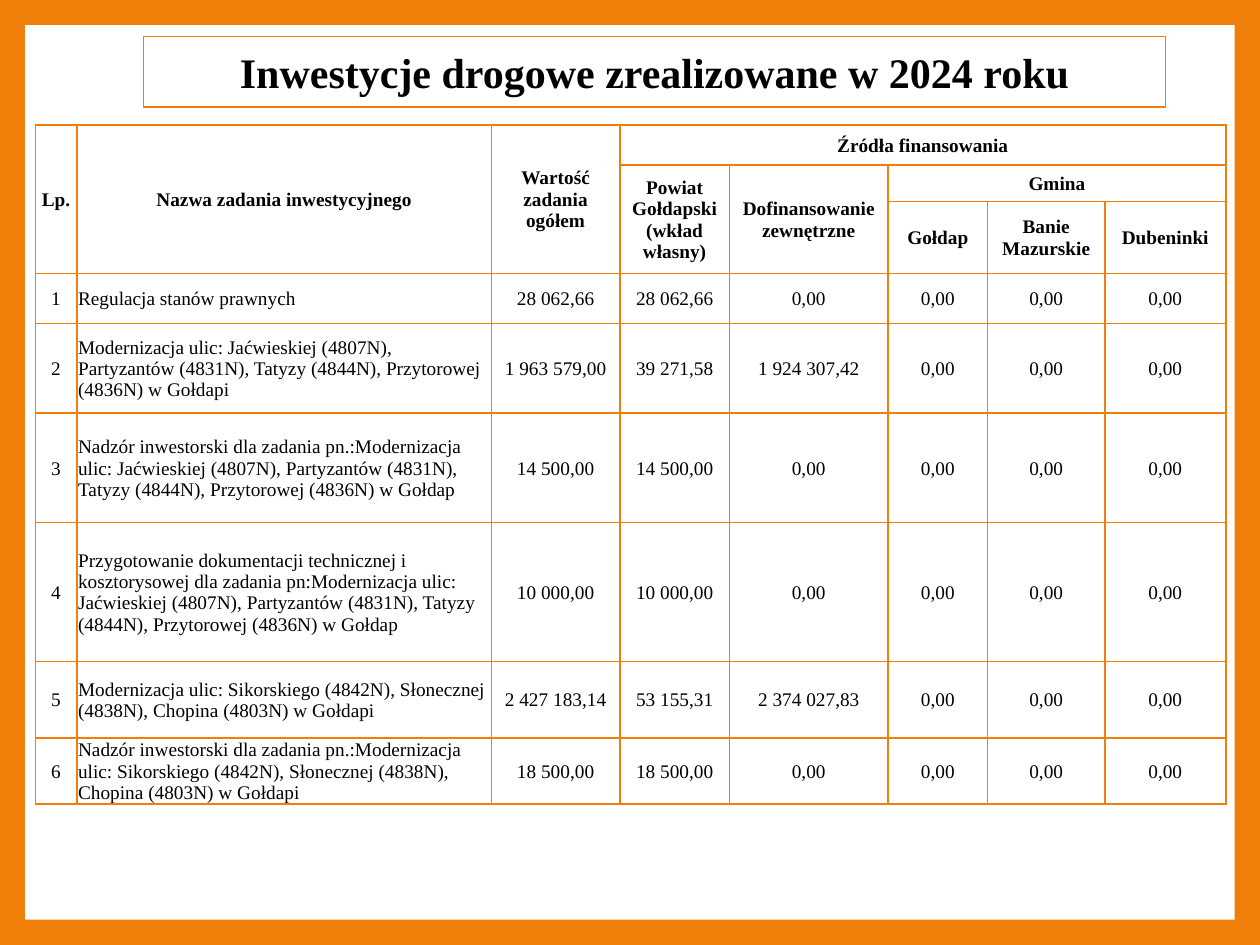
from lxml.etree import SubElement
from pptx import Presentation
from pptx.dml.color import RGBColor
from pptx.enum.shapes import MSO_SHAPE
from pptx.enum.text import MSO_ANCHOR, PP_ALIGN
from pptx.oxml.ns import qn
from pptx.util import Inches, Pt

ORANGE = RGBColor(0xF0, 0x7F, 0x09)
WHITE = RGBColor(0xFF, 0xFF, 0xFF)
BLACK = RGBColor(0, 0, 0)
FONT = "Times New Roman"

TITLE = "Inwestycje drogowe zrealizowane w 2024 roku"
HEADERS = [
    (0, 0, 3, 1, "Lp."),
    (0, 1, 3, 1, "Nazwa zadania inwestycyjnego"),
    (0, 2, 3, 1, "Wartość zadania ogółem"),
    (0, 3, 1, 5, "Źródła finansowania"),
    (1, 3, 2, 1, "Powiat Gołdapski (wkład własny)"),
    (1, 4, 2, 1, "Dofinansowanie zewnętrzne"),
    (1, 5, 1, 3, "Gmina"),
    (2, 5, 1, 1, "Gołdap"),
    (2, 6, 1, 1, "Banie Mazurskie"),
    (2, 7, 1, 1, "Dubeninki"),
]
TASKS = [
    ("Regulacja stanów prawnych", "28 062,66", "28 062,66", "0,00"),
    ("Modernizacja ulic: Jaćwieskiej (4807N), Partyzantów (4831N), "
     "Tatyzy (4844N), Przytorowej (4836N) w Gołdapi",
     "1 963 579,00", "39 271,58", "1 924 307,42"),
    ("Nadzór inwestorski dla zadania pn.:Modernizacja ulic: Jaćwieskiej (4807N), "
     "Partyzantów (4831N), Tatyzy (4844N), Przytorowej (4836N) w Gołdap",
     "14 500,00", "14 500,00", "0,00"),
    ("Przygotowanie dokumentacji technicznej i kosztorysowej dla zadania "
     "pn:Modernizacja ulic: Jaćwieskiej (4807N), Partyzantów (4831N), "
     "Tatyzy (4844N), Przytorowej (4836N) w Gołdap",
     "10 000,00", "10 000,00", "0,00"),
    ("Modernizacja ulic: Sikorskiego (4842N), Słonecznej (4838N), "
     "Chopina (4803N) w Gołdapi",
     "2 427 183,14", "53 155,31", "2 374 027,83"),
    ("Nadzór inwestorski dla zadania pn.:Modernizacja ulic: Sikorskiego (4842N), "
     "Słonecznej (4838N), Chopina (4803N) w Gołdapi",
     "18 500,00", "18 500,00", "0,00"),
]
COMMUNE_SHARES = ["0,00"] * 3
COL_WIDTHS = [0.33, 3.29, 1.02, 0.87, 1.26, 0.79, 0.93, 0.96]
ROW_HEIGHTS = [0.32, 0.29, 0.57, 0.4, 0.71, 0.87, 1.1, 0.61, 0.51]
HEADER_ROWS = 3


def write(tf, text, size=11, bold=False, align=PP_ALIGN.CENTER):
    tf.word_wrap = True
    p = tf.paragraphs[0]
    p.alignment = align
    r = p.add_run()
    r.text = text
    r.font.name = FONT
    r.font.size = Pt(size)
    r.font.bold = bold
    r.font.color.rgb = BLACK


def add_box(slide, left, top, width, height):
    sp = slide.shapes.add_shape(MSO_SHAPE.RECTANGLE, Inches(left), Inches(top),
                                Inches(width), Inches(height))
    sp.shadow.inherit = False
    return sp


def style_cell(cell):
    cell.vertical_anchor = MSO_ANCHOR.MIDDLE
    cell.margin_left = cell.margin_right = cell.margin_top = Inches(0.01)
    cell.margin_bottom = 0
    tcPr = cell._tc.get_or_add_tcPr()
    for side in ("a:lnL", "a:lnR", "a:lnT", "a:lnB"):
        ln = SubElement(tcPr, qn(side), w=str(Pt(1)))
        fill = SubElement(ln, qn("a:solidFill"))
        SubElement(fill, qn("a:srgbClr"), val=str(ORANGE))
    cell.fill.background()


def add_tasks_table(slide):
    table = slide.shapes.add_table(
        len(ROW_HEIGHTS), len(COL_WIDTHS), Inches(0.28), Inches(0.99),
        Inches(sum(COL_WIDTHS)), Inches(sum(ROW_HEIGHTS))).table
    table.first_row = table.horz_banding = False
    for column, width in zip(table.columns, COL_WIDTHS):
        column.width = Inches(width)
    for row, height in zip(table.rows, ROW_HEIGHTS):
        row.height = Inches(height)
    for cell in table.iter_cells():
        style_cell(cell)
    for row, col, height, width, text in HEADERS:
        cell = table.cell(row, col)
        if height * width > 1:
            cell.merge(table.cell(row + height - 1, col + width - 1))
        write(cell.text_frame, text, bold=True)
    for number, task in enumerate(TASKS, 1):
        for col, text in enumerate([str(number), *task, *COMMUNE_SHARES]):
            write(table.cell(HEADER_ROWS + number - 1, col).text_frame, text,
                  align=PP_ALIGN.LEFT if col == 1 else PP_ALIGN.CENTER)


def main():
    prs = Presentation()
    prs.slide_width, prs.slide_height = Inches(10), Inches(7.5)
    slide = prs.slides.add_slide(prs.slide_layouts[6])
    slide.background.fill.solid()
    slide.background.fill.fore_color.rgb = ORANGE

    panel = add_box(slide, 0.2, 0.2, 9.6, 7.1)
    panel.fill.solid()
    panel.fill.fore_color.rgb = WHITE
    panel.line.fill.background()

    add_tasks_table(slide)

    title = add_box(slide, 1.14, 0.29, 8.11, 0.56)
    title.fill.background()
    title.line.color.rgb = ORANGE
    title.line.width = Pt(0.75)
    title.text_frame.vertical_anchor = MSO_ANCHOR.MIDDLE
    write(title.text_frame, TITLE, size=24, bold=True)

    prs.save("out.pptx")


if __name__ == "__main__":
    main()
